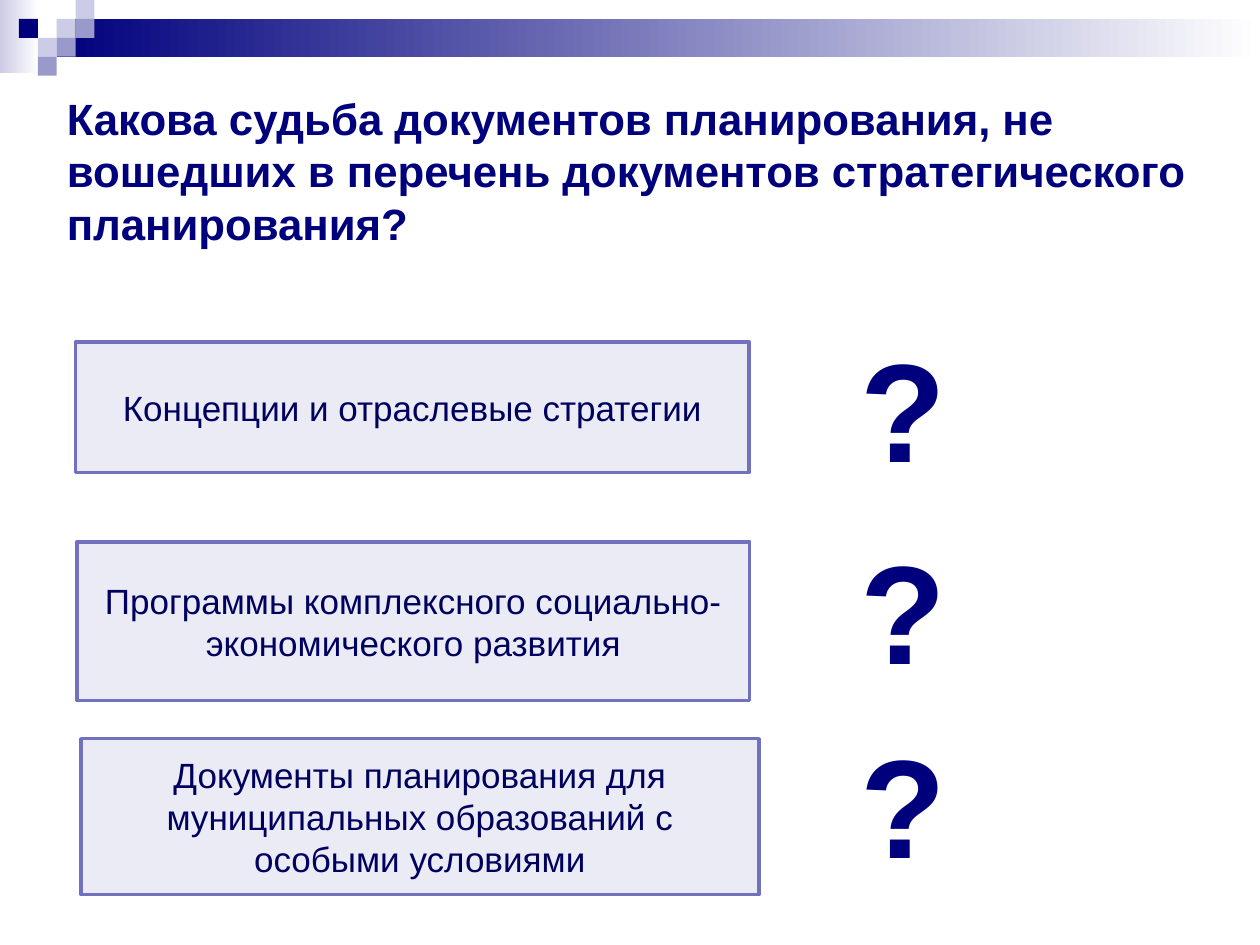
from pptx import Presentation
from pptx.dml.color import RGBColor
from pptx.enum import shapes, text
from pptx.util import Pt

NAVY, LILAC, VIOLET = "00007D", "CCCCE6", "9999CC"


def rgb(value):
    return RGBColor.from_string(value)


def write(tf, content, size=20, color=NAVY, bold=False, align=text.PP_ALIGN.LEFT,
          anchor=text.MSO_ANCHOR.MIDDLE, wrap=True, fit=text.MSO_AUTO_SIZE.NONE):
    tf.auto_size = fit
    tf.word_wrap = wrap
    tf.vertical_anchor = anchor
    p = tf.paragraphs[0]
    p.alignment = align
    r = p.add_run()
    r.text = content
    r.font.name, r.font.size, r.font.bold = "Arial", Pt(size), bold
    r.font.color.rgb = rgb(color)


def add_rect(s, box, fill, line=None, fade=False):
    """Draw a rectangle; with fade its fill runs from left to white."""
    sp = s.shapes.add_shape(shapes.MSO_SHAPE.RECTANGLE, *map(Pt, box))
    sp.shadow.inherit = False
    if fade:
        sp.fill.gradient()
        sp.fill.gradient_angle = 0
        for stop, color in zip(sp.fill.gradient_stops, (fill, "FFFFFF")):
            stop.color.rgb = rgb(color)
    else:
        sp.fill.solid()
        sp.fill.fore_color.rgb = rgb(fill)
    if line:
        sp.line.color.rgb = rgb(line)
        sp.line.width = Pt(2)
    else:
        sp.line.fill.background()
    return sp


def add_header(s, x, y, width):
    """Draw the fading bands and the mosaic of small squares."""
    cell = 10.8
    add_rect(s, (x, y, 22.3, 41.8), LILAC, fade=True)
    add_rect(s, (x + 3 * cell, y + cell, width - 3 * cell, 2 * cell), NAVY, fade=True)
    mosaic = [(3, 1, LILAC), (4, 0, LILAC), (4, 1, VIOLET), (2, 2, LILAC),
              (1, 1, NAVY), (3, 2, VIOLET), (2, 3, VIOLET)]
    for col, row, color in mosaic:
        add_rect(s, (x + col * cell, y + row * cell, cell, cell), color)


def add_title(s, box, content):
    title = s.shapes.title
    title.left, title.top, title.width, title.height = map(Pt, box)
    write(title.text_frame, content, size=25, bold=True)


def add_question(s, box, content, mark_x, mark_y):
    """Draw a framed topic with a large question mark to its right."""
    sp = add_rect(s, box, "EBEBF5", line="7171BD")
    write(sp.text_frame, content, color="00005E", align=text.PP_ALIGN.CENTER)
    mark = s.shapes.add_textbox(Pt(mark_x), Pt(mark_y), Pt(64), Pt(104.4))
    write(mark.text_frame, "?", size=80, bold=True, wrap=False,
          anchor=text.MSO_ANCHOR.TOP, fit=text.MSO_AUTO_SIZE.SHAPE_TO_FIT_TEXT)


def main():
    prs = Presentation()
    prs.slide_width, prs.slide_height = Pt(720), Pt(540)
    s = prs.slides.add_slide(prs.slide_layouts[5])
    add_header(s, 0, 0, 720)
    add_title(s, (31, 43.2, 657.4, 108),
              "Какова судьба документов планирования, не вошедших в перечень "
              "документов стратегического планирования?")
    questions = [
        ((43.2, 195.3, 385, 74.7), "Концепции и отраслевые стратегии", 180.7),
        ((44, 309.6, 384.4, 90.7),
         "Программы комплексного социально-экономического развития", 296),
        ((46.2, 422.1, 387.4, 89.1),
         "Документы планирования для муниципальных образований с особыми условиями",
         406.8),
    ]
    for box, content, mark_y in questions:
        add_question(s, box, content, 484.6, mark_y)
    prs.save("out.pptx")


if __name__ == "__main__":
    main()
